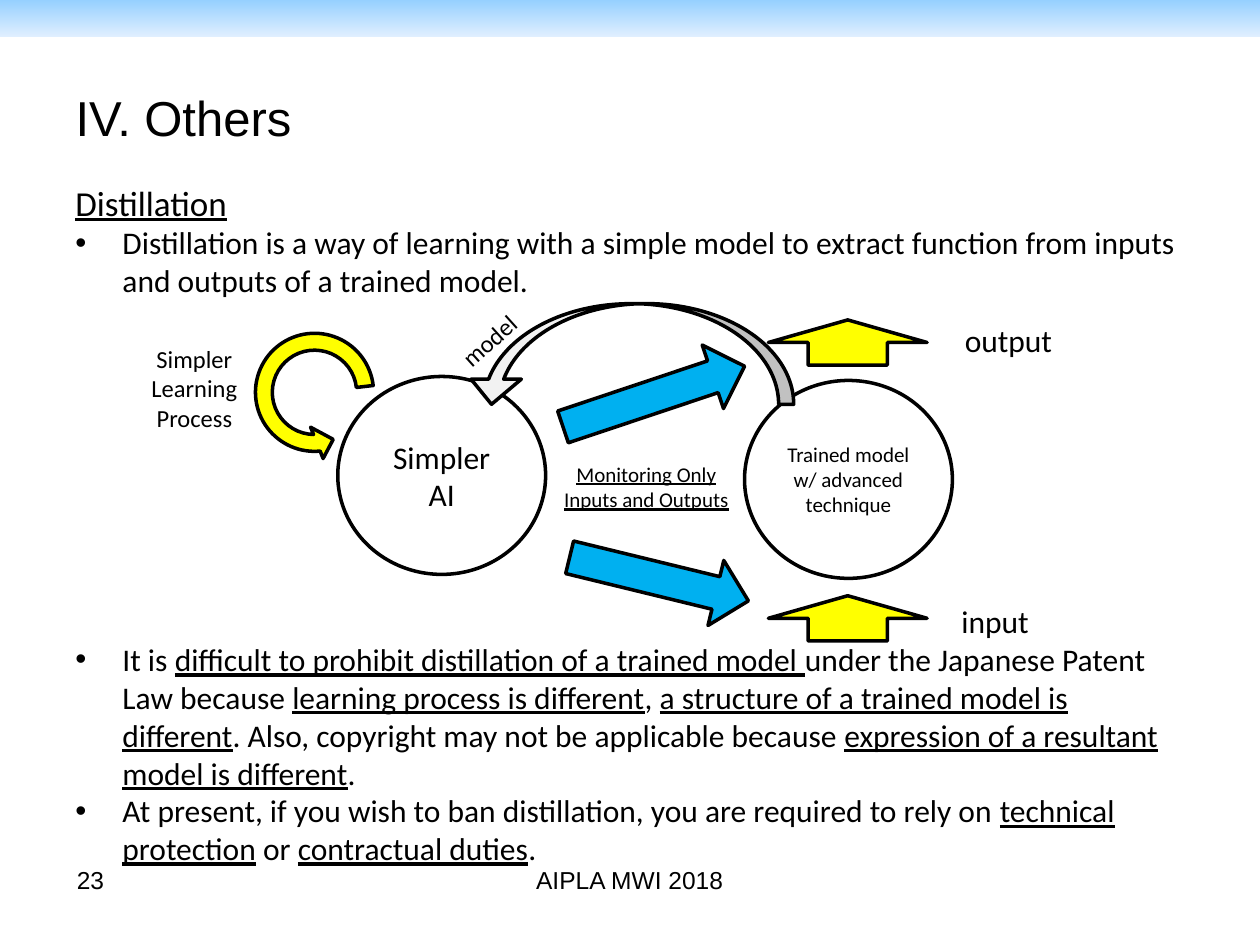
from dataclasses import dataclass

from lxml.etree import SubElement
from pptx import Presentation
from pptx.dml.color import RGBColor
from pptx.enum.shapes import MSO_SHAPE as Preset
from pptx.enum.text import MSO_ANCHOR as Anchor, PP_ALIGN as Align
from pptx.oxml.ns import qn
from pptx.util import Cm, Pt


@dataclass(frozen=True)
class Theme:
    heading_font: str = "Arial"
    body_font: str = "Calibri"
    ink: RGBColor = RGBColor(0, 0, 0)
    paper: RGBColor = RGBColor(255, 255, 255)
    band_top: RGBColor = RGBColor(0x96, 0xD0, 0xFF)
    band_bottom: RGBColor = RGBColor(0xE0, 0xEF, 0xFF)
    flow: RGBColor = RGBColor(255, 255, 0)
    monitor: RGBColor = RGBColor(0, 0xB0, 0xF0)
    transfer: RGBColor = RGBColor(0xF2, 0xF2, 0xF2)
    title: Pt = Pt(28)
    subtitle: Pt = Pt(20)
    text: Pt = Pt(18)
    label: Pt = Pt(14)
    small: Pt = Pt(12)
    outline: Pt = Pt(2)


THEME = Theme()
DIAGRAM_GAP = Pt(195)  # nine text lines left free for the diagram

DIFFICULTY = [
    "It is ", "difficult to prohibit distillation of a trained model ",
    "under the Japanese Patent Law because ", "learning process is different",
    ", ", "a structure of a trained model is different",
    ". Also, copyright may not be applicable because ",
    "expression of a resultant model is different", "."]
REMEDY = [
    "At present, if you wish to ban distillation, you are required to rely on ",
    "technical protection", " or ", "contractual duties", "."]


def style(paragraph, size, font=THEME.body_font, align=Align.LEFT, underline=None):
    paragraph.alignment = align
    paragraph.font.name = font
    paragraph.font.size = size
    paragraph.font.color.rgb = THEME.ink
    paragraph.font.underline = underline


def write_lines(frame, lines, size, **looks):
    frame.text = "\n".join(lines)
    for paragraph in frame.paragraphs:
        style(paragraph, size, **looks)


def add_label(slide, box, lines, size, rotation=0, **looks):
    label = slide.shapes.add_textbox(*map(Cm, box))
    label.rotation = rotation
    label.text_frame.word_wrap = False
    write_lines(label.text_frame, lines, size, **looks)


def add_bullet(frame, pieces):
    """Add a bulleted paragraph; every second piece is underlined."""
    paragraph = frame.add_paragraph()
    properties = paragraph._p.get_or_add_pPr()
    properties.set("marL", str(Cm(0.95)))
    properties.set("indent", str(-Cm(0.95)))
    SubElement(properties, qn("a:buFont"), typeface="Arial")
    SubElement(properties, qn("a:buChar"), char="•")
    style(paragraph, THEME.text)
    for position, piece in enumerate(pieces):
        run = paragraph.add_run()
        run.text = piece
        if position % 2:
            run.font.underline = True
    return paragraph


def add_outlined(slide, preset, box, color, rotation=0, adjustments=()):
    shape = slide.shapes.add_shape(preset, *map(Cm, box))
    shape.shadow.inherit = False
    shape.fill.solid()
    shape.fill.fore_color.rgb = color
    shape.line.color.rgb = THEME.ink
    shape.line.width = THEME.outline
    shape.rotation = rotation
    for index, value in enumerate(adjustments):
        shape.adjustments[index] = value
    return shape


def add_model(slide, left, top, lines, size):
    circle = add_outlined(slide, Preset.OVAL, (left, top, 4.19, 3.99), THEME.paper)
    circle.text_frame.word_wrap = True
    circle.text_frame.vertical_anchor = Anchor.MIDDLE
    write_lines(circle.text_frame, lines, size, align=Align.CENTER)


def add_band(slide):
    band = slide.shapes.add_shape(Preset.RECTANGLE, 0, 0, Cm(25.4), Cm(0.74))
    band.shadow.inherit = False
    band.line.fill.background()
    band.fill.gradient()
    band.fill.gradient_angle = 270
    for stop, color in zip(band.fill.gradient_stops, (THEME.band_top, THEME.band_bottom)):
        stop.color.rgb = color


def add_frame(slide):
    """Add the parts around the content: band, footer, page number and title."""
    add_band(slide)
    add_label(slide, (9.8, 17.32, 5.79, 0.86), ["AIPLA MWI 2018"], THEME.label,
              font=THEME.heading_font, align=Align.CENTER)
    add_label(slide, (1.3, 17.32, 1.2, 0.86), ["23"], THEME.label,
              font=THEME.heading_font)
    title = slide.shapes.title
    title.left, title.top, title.width, title.height = map(Cm, (1.27, 0.76, 22.86, 3.18))
    title.text_frame.vertical_anchor = Anchor.MIDDLE
    write_lines(title.text_frame, ["IV. Others"], THEME.title, font=THEME.heading_font)


def add_body(slide):
    frame = slide.shapes.add_textbox(*map(Cm, (1.27, 3.53, 22.86, 14.1))).text_frame
    frame.word_wrap = True
    write_lines(frame, ["Distillation"], THEME.subtitle, underline=True)
    add_bullet(frame, ["Distillation is a way of learning with a simple model to extract "
                       "function from inputs and outputs of a trained model."])
    add_bullet(frame, DIFFICULTY).space_before = DIAGRAM_GAP
    add_bullet(frame, REMEDY)


def add_diagram(slide):
    add_model(slide, 15.01, 7.67, ["Trained model", "w/ advanced technique"], THEME.small)
    add_model(slide, 6.81, 7.59, ["Simpler AI"], THEME.text)

    for arrow_top in (12.01, 6.45):
        add_outlined(slide, Preset.UP_ARROW, (15.49, arrow_top, 3.2, 0.91), THEME.flow)
    add_label(slide, (19.13, 12.01, 1.88, 1.02), ["input"], THEME.text)
    add_label(slide, (19.2, 6.35, 2.29, 1.02), ["output"], THEME.text)

    for box, rotation in (((11.43, 11, 3.71, 1.35), 13.7),
                          ((11.25, 7.32, 3.86, 1.35), 341.5)):
        add_outlined(slide, Preset.RIGHT_ARROW, box, THEME.monitor, rotation)
    add_label(slide, (11.1, 9.17, 3.86, 1.27), ["Monitoring Only", "Inputs and Outputs"],
              THEME.small, align=Align.CENTER, underline=True)

    learning_loop = add_outlined(slide, Preset.CIRCULAR_ARROW, (4.98, 6.55, 2.72, 2.72),
                                 THEME.flow, 248.3, (0.125, 11.42, 204.58, 44.96, 0.125))
    learning_loop.element.spPr.find(qn("a:xfrm")).set("flipH", "1")
    add_label(slide, (2.79, 6.81, 2.26, 2.06), ["Simpler", "Learning", "Process"],
              THEME.label, align=Align.CENTER)

    add_outlined(slide, Preset.CURVED_UP_ARROW, (9.4, 6.12, 6.6, 2.03),
                 THEME.transfer, 180, (0.15, 0.5, 0.25))
    add_label(slide, (8.97, 6.43, 1.8, 0.86), ["model"], THEME.label, rotation=317.9)


def main():
    deck = Presentation()
    deck.slide_width, deck.slide_height = Cm(25.4), Cm(19.05)
    slide = deck.slides.add_slide(deck.slide_layouts[5])
    add_frame(slide)
    add_body(slide)
    add_diagram(slide)
    deck.save("out.pptx")


if __name__ == "__main__":
    main()
